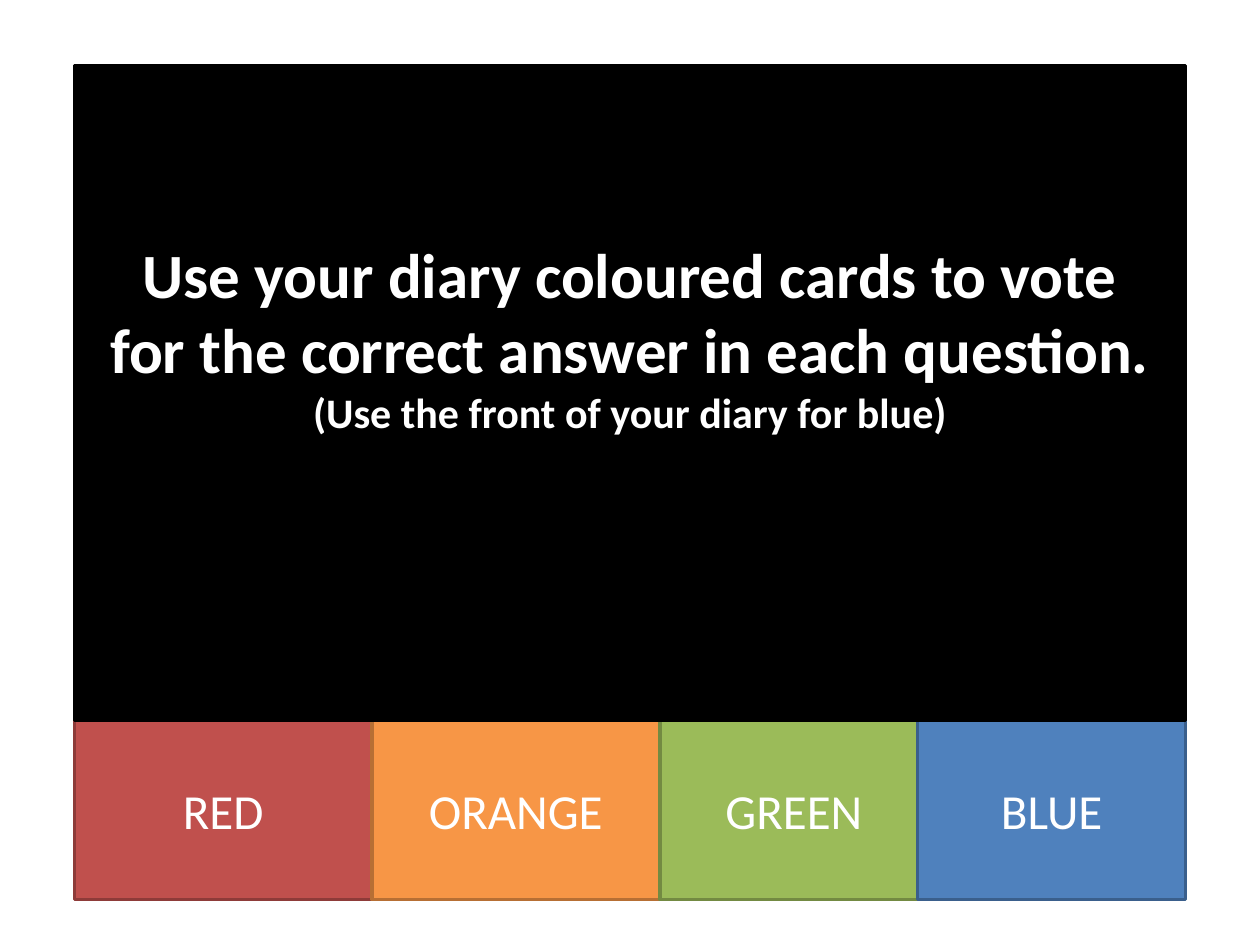
"""Build the voting-card instruction slide."""
from dataclasses import dataclass

from pptx import Presentation
from pptx.dml.color import RGBColor
from pptx.enum.shapes import MSO_SHAPE
from pptx.enum.text import MSO_ANCHOR, PP_ALIGN
from pptx.util import Pt

RECT = MSO_SHAPE.RECTANGLE
CENTER = PP_ALIGN.CENTER
MIDDLE = MSO_ANCHOR.MIDDLE


@dataclass(frozen=True)
class Theme:
    font: str = "Calibri"
    text: str = "FFFFFF"
    board: str = "000000"
    red: tuple = ("C0504D", "8E3B39")
    orange: tuple = ("F79646", "B76F34")
    green: tuple = ("9BBB59", "738A42")
    blue: tuple = ("4F81BD", "3A5F8C")
    title_size: int = 36
    note_size: int = 24
    card_size: int = 28
    line_width: int = 2


class SlideBuilder:
    def __init__(self, slide, theme):
        self.s = slide
        self.theme = theme

    def paragraph(self, p, text, size, bold=False):
        p.text = text
        p.alignment = CENTER
        p.font.name = self.theme.font
        p.font.size = Pt(size)
        p.font.bold = bold
        p.font.color.rgb = RGBColor.from_string(self.theme.text)

    def rect(self, x, y, w, h, fill, line):
        sp = self.s.shapes.add_shape(RECT, Pt(x), Pt(y), Pt(w), Pt(h))
        sp.shadow.inherit = False
        sp.fill.solid()
        sp.fill.fore_color.rgb = RGBColor.from_string(fill)
        sp.line.color.rgb = RGBColor.from_string(line)
        sp.line.width = Pt(self.theme.line_width)
        return sp

    def card(self, x, y, w, h, label, colors):
        tf = self.rect(x, y, w, h, *colors).text_frame
        tf.vertical_anchor = MIDDLE
        self.paragraph(tf.paragraphs[0], label, self.theme.card_size)

    def text(self, x, y, w, h, lines):
        tf = self.s.shapes.add_textbox(Pt(x), Pt(y), Pt(w), Pt(h)).text_frame
        tf.word_wrap = True
        for i, (text, size) in enumerate(lines):
            p = tf.add_paragraph() if i else tf.paragraphs[0]
            self.paragraph(p, text, size, bold=True)


def main():
    prs = Presentation()
    prs.slide_width, prs.slide_height = Pt(720), Pt(540)
    theme = Theme()
    s = SlideBuilder(prs.slides.add_slide(prs.slide_layouts[6]), theme)

    left, top, width, height = 42.5, 37.4, 635, 374.4
    cards = [
        ("RED", left, 170, theme.red),
        ("ORANGE", 212.5, 164.4, theme.orange),
        ("GREEN", 377, 153.2, theme.green),
        ("BLUE", 524.3, 153.2, theme.blue),
    ]
    for label, x, w, colors in cards:
        s.card(x, top + height, w, 102.2, label, colors)

    s.rect(left, top, width, height, theme.board, theme.board)
    s.text(54, 131, 612, 128, [
        ("Use your diary coloured cards to vote for the correct answer in each question.",
         theme.title_size),
        ("(Use the front of your diary for blue)", theme.note_size),
    ])
    prs.save("out.pptx")


if __name__ == "__main__":
    main()
